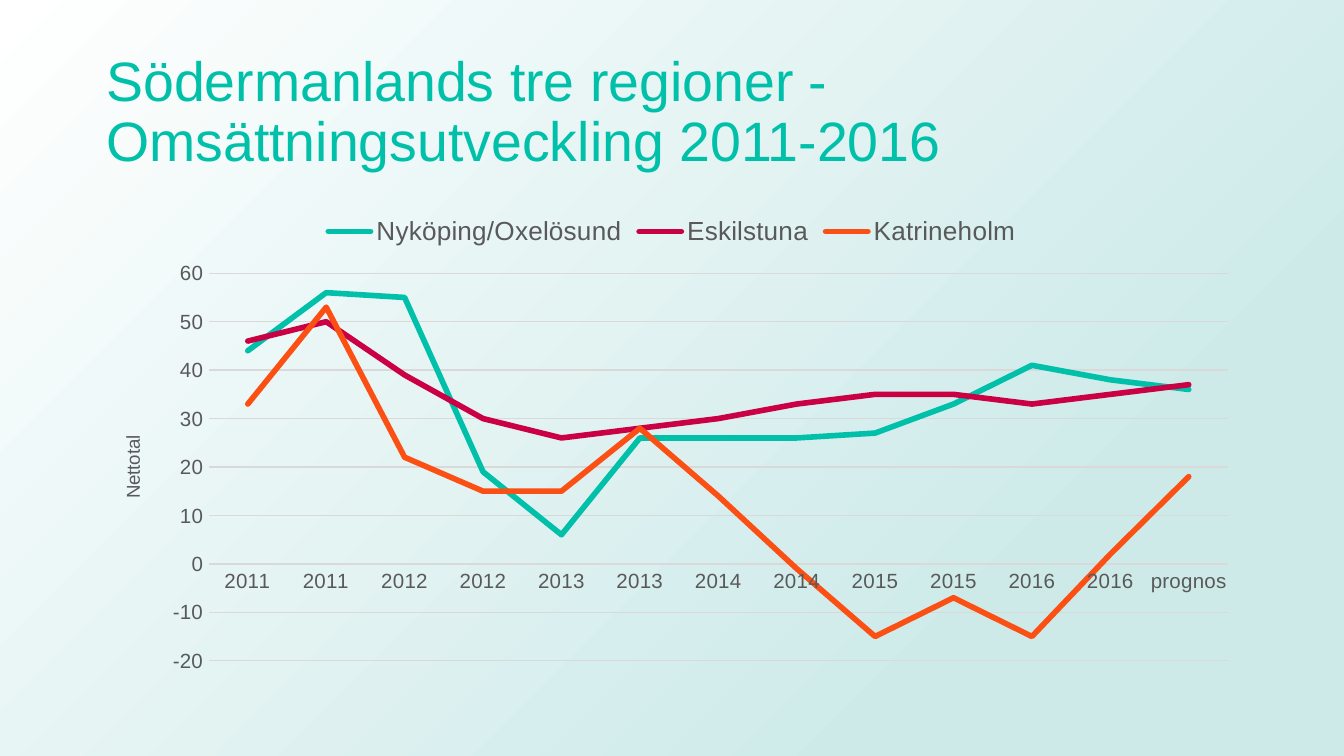
from lxml import etree
from pptx import Presentation
from pptx.chart.data import CategoryChartData
from pptx.dml.color import RGBColor
from pptx.enum.chart import XL_CHART_TYPE, XL_LEGEND_POSITION, XL_TICK_MARK
from pptx.enum.text import MSO_ANCHOR, PP_ALIGN
from pptx.oxml import parse_xml
from pptx.oxml.ns import nsdecls
from pptx.util import Inches, Pt

LINE_CHART = XL_CHART_TYPE.LINE
LEGEND_TOP = XL_LEGEND_POSITION.TOP
NO_TICK = XL_TICK_MARK.NONE
MIDDLE = MSO_ANCHOR.MIDDLE
LEFT = PP_ALIGN.LEFT
TEAL, GREY, GRID = "00C0A9", "595959", "D9D9D9"


def color(hex_value):
    return RGBColor.from_string(hex_value)


def set_font(font, size, hex_value):
    font.name = "Arial"
    font.size = Pt(size)
    font.bold = False
    font.color.rgb = color(hex_value)


# Widescreen page, 16:9
deck = Presentation()
deck.slide_width = Inches(10)
deck.slide_height = Inches(10 * 9 / 16)
page = deck.slides.add_slide(deck.slide_layouts[5])

# Background: white at the top left to pale teal at the bottom right
background = page.background.fill
background.gradient()
background.gradient_angle = 315
for stop, position, shade in zip(background.gradient_stops, (0, 0.77), ("FFFFFF", "CDEAE9")):
    stop.position = position
    stop.color.rgb = color(shade)

# Title
title = page.shapes.title
title.left, title.top = Inches(0.69), Inches(0.3)
title.width, title.height = Inches(8.62), Inches(1.09)
title.text_frame.text = "Södermanlands tre regioner - Omsättningsutveckling 2011-2016"
title.text_frame.word_wrap = True
title.text_frame.vertical_anchor = MIDDLE
para = title.text_frame.paragraphs[0]
para.alignment = LEFT
para.line_spacing = 0.9
set_font(para.runs[0].font, 29.7, TEAL)

# Chart data: two values a year, then the forecast
regions = [
    ("Nyköping/Oxelösund", TEAL, [44, 56, 55, 19, 6, 26, 26, 26, 27, 33, 41, 38, 36]),
    ("Eskilstuna", "CB0044", [46, 50, 39, 30, 26, 28, 30, 33, 35, 35, 33, 35, 37]),
    ("Katrineholm", "FB4F14", [33, 53, 22, 15, 15, 28, 14, -1, -15, -7, -15, 2, 18]),
]
data = CategoryChartData()
data.categories = [str(year) for year in range(2011, 2017) for _ in range(2)] + ["prognos"]
for name, _, values in regions:
    data.add_series(name, values)
chart = page.shapes.add_chart(
    LINE_CHART, Inches(0.69), Inches(1.5), Inches(8.62), Inches(3.56), data
).chart
chart.has_title = False
chart.font.name = "Calibri"
chart.font.size = Pt(10)

# Lines with round ends
for series, (_, shade, _) in zip(chart.plots[0].series, regions):
    series.smooth = False
    series.format.line.color.rgb = color(shade)
    series.format.line.width = Pt(3)
    outline = series._element.find("{*}spPr/{*}ln")
    outline.set("cap", "rnd")
    etree.SubElement(outline, outline.tag.replace("}ln", "}round"))

# Legend
chart.has_legend = True
chart.legend.position = LEGEND_TOP
chart.legend.include_in_layout = False
set_font(chart.legend.font, 14, GREY)

# Axes
years, totals = chart.category_axis, chart.value_axis
for axis in (years, totals):
    axis.major_tick_mark = axis.minor_tick_mark = NO_TICK
    set_font(axis.tick_labels.font, 11, GREY)
totals.minimum_scale, totals.maximum_scale, totals.major_unit = -20, 60, 10
totals.has_major_gridlines = True
totals.format.line.fill.background()
for line in (years.format.line, totals.major_gridlines.format.line):
    line.color.rgb = color(GRID)
    line.width = Pt(0.75)
axis_title = totals.axis_title.text_frame
axis_title.text = "Nettotal"
set_font(axis_title.paragraphs[0].runs[0].font, 10, GREY)

# Plot area inside the chart, as shares of its size
plot_area = chart.plots[0]._element.getparent()
for old_layout in plot_area.findall("{*}layout"):
    plot_area.remove(old_layout)
shares = "".join(
    f'<c:{key} val="{value}"/>'
    for key, value in (("x", 0.1), ("y", 0.15), ("w", 0.88), ("h", 0.81))
)
plot_area.insert(0, parse_xml(
    f'<c:layout {nsdecls("c")}><c:manualLayout><c:layoutTarget val="inner"/>'
    f'<c:xMode val="edge"/><c:yMode val="edge"/>{shares}</c:manualLayout></c:layout>'
))

deck.save("out.pptx")
